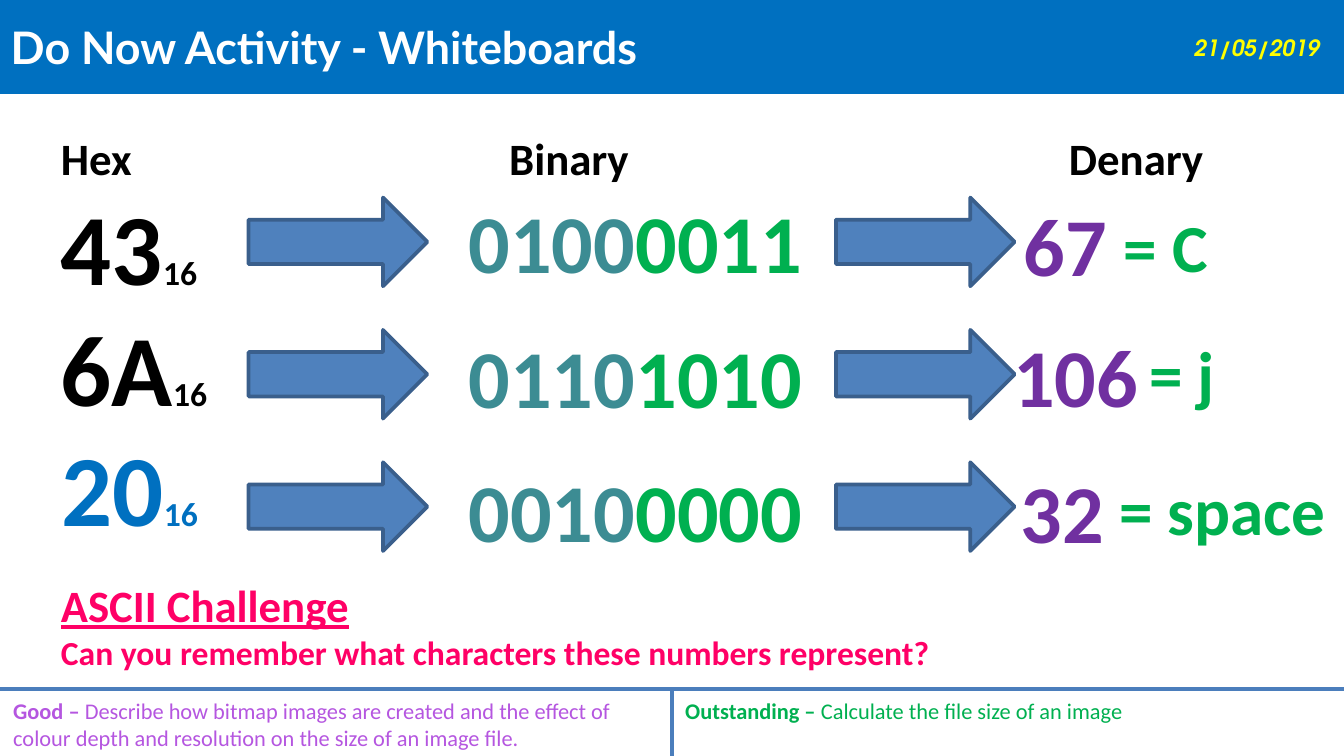
from lxml.etree import SubElement
from pptx import Presentation
from pptx.dml.color import RGBColor
from pptx.enum.shapes import MSO_CONNECTOR, MSO_SHAPE
from pptx.enum.text import MSO_ANCHOR, PP_ALIGN
from pptx.oxml.ns import qn
from pptx.util import Pt

EMU_PER_PX = 4572
WIDTH, HEIGHT = 2000, 1125
COLOURS = {
    "banner": "0070C0", "white": "FFFFFF", "date": "FFFF00", "text": "000000",
    "high": "3C8C93", "low": "00B050", "denary": "7030A0", "challenge": "FF0066",
    "arrow": "4F81BD", "arrow_edge": "3A5F8C", "rule": "4B7EBC", "good": "B556E0",
}


def px(length):
    """Turn px into EMU."""
    return length * EMU_PER_PX


def paint(fill, colour):
    """Give a fill one solid colour from the palette."""
    fill.solid()
    fill.fore_color.rgb = RGBColor.from_string(COLOURS[colour])


def write(paragraph, *pieces, family="Calibri"):
    """Add (text, size, colour, style) runs, where style holds any of b, i and u."""
    paragraph.alignment = PP_ALIGN.LEFT
    for text, size, colour, style in pieces:
        run = paragraph.add_run()
        run.text = text
        font = run.font
        font.name, font.size = family, Pt(size)
        font.bold, font.italic, font.underline = (mark in style for mark in "biu")
        font.color.rgb = RGBColor.from_string(COLOURS[colour])


def add_label(slide, box, *pieces, wrap=False, family="Calibri"):
    """Place a text box and return its text frame."""
    frame = slide.shapes.add_textbox(*map(px, box)).text_frame
    frame.word_wrap = wrap
    write(frame.paragraphs[0], *pieces, family=family)
    return frame


def add_block(slide, kind, box, fill):
    """Place a flat filled shape."""
    block = slide.shapes.add_shape(kind, *map(px, box))
    block.shadow.inherit = False
    paint(block.fill, fill)
    return block


def add_rule(slide, start, end):
    """Draw a straight rule between two points."""
    rule = slide.shapes.add_connector(MSO_CONNECTOR.STRAIGHT, *map(px, start + end))
    rule.line.width = Pt(2.25)
    paint(rule.line.fill, "rule")
    SubElement(rule._element.spPr, qn("a:effectLst"))


def add_banner(slide, left, top, width, height):
    """Build the title band with its date."""
    band = add_block(slide, MSO_SHAPE.RECTANGLE, (left, top, width, height), "banner")
    band.line.fill.background()
    title = slide.shapes.title
    title.left, title.top, title.width, title.height = map(
        px, (left - 4, top + 16, width, 106))
    slide.shapes._spTree.append(title._element)
    title.text_frame.vertical_anchor = MSO_ANCHOR.MIDDLE
    write(title.text_frame.paragraphs[0],
          ("Do Now Activity - Whiteboards", 24, "white", "b"), family="Lato")
    date = add_label(slide, (left + width - 243, top + 41, 240, 60),
                     ("21/05/2019", 12, "date", "bi"),
                     wrap=True, family="TeX Gyre Adventor")
    date.vertical_anchor = MSO_ANCHOR.MIDDLE


def add_task(slide, left, top, width, height):
    """Write the headings, the first hex numbers and the challenge."""
    frame = add_label(slide, (left, top, width, height),
                      ("Hex\tBinary\tDenary", 24, "text", "b"), wrap=True)
    tabs = SubElement(frame.paragraphs[0]._p.get_or_add_pPr(), qn("a:tabLst"))
    for position in (667, 1500):
        SubElement(tabs, qn("a:tab"), pos=str(px(position)), algn="l")
    for number in ("43", "6A"):
        write(frame.add_paragraph(),
              (number, 54, "text", "b"), ("16", 18, "text", "b"))
    challenge = frame.add_paragraph()
    challenge.space_before = Pt(81)
    write(challenge, ("ASCII Challenge", 24, "challenge", "bu"))
    write(frame.add_paragraph(),
          ("Can you remember what characters these numbers represent?",
           18, "challenge", "b"))


def add_conversion(slide, left, top, bits, denary, character):
    """Build one row of arrows, binary digits, denary value and character."""
    for offset in (0, 874):
        arrow = add_block(slide, MSO_SHAPE.RIGHT_ARROW,
                          (left + offset, top, 266, 132), "arrow")
        paint(arrow.line.fill, "arrow_edge")
        arrow.line.width = Pt(2)
    digits, rise = bits
    add_label(slide, (left + 308, top - rise, 590, 168),
              (digits[:4], 44, "high", "b"), (digits[4:], 44, "low", "b"))
    for (text, x, y, width), size, colour, height in (
            (denary, 44, "denary", 168), (character, 36, "low", 142)):
        add_label(slide, (left + x, top + y, width, height), (text, size, colour, "b"))


def add_outcomes(slide, left, top, width, height):
    """Build the ruled footer with the two learning outcomes."""
    middle = left + width // 2
    add_rule(slide, (left, top), (left + width, top))
    add_rule(slide, (middle, top), (middle, top + height))
    outcomes = (
        (left, 984, 100, "good", "Good – ",
         "Describe how bitmap images are created and the effect of "
         "colour depth and resolution on the size of an image file."),
        (middle, 976, 60, "low", "Outstanding – ",
         "Calculate the file size of an image"),
    )
    for x, span, depth, colour, level, outcome in outcomes:
        add_label(slide, (x, top + 3, span, depth),
                  (level, 12, colour, "b"), (outcome, 12, colour, ""), wrap=True)


def main():
    """Build and save the slide."""
    deck = Presentation()
    deck.slide_width, deck.slide_height = px(WIDTH), px(HEIGHT)
    slide = deck.slides.add_slide(deck.slide_layouts[5])
    add_outcomes(slide, 0, 1025, WIDTH, HEIGHT - 1025)
    add_banner(slide, 0, 0, WIDTH, 140)
    add_task(slide, 71, 185, 1890, 834)
    conversions = (
        (("01000011", 19), ("67", 1134, -14, 178), (" = C", 1260, 2, 190)),
        (("01101010", 15), ("106", 1118, -17, 246), (" = j", 1298, -7, 162)),
        (("00100000", 12), ("32", 1129, -11, 178), ("= space", 1276, -1, 352)),
    )
    for row, (bits, denary, character) in enumerate(conversions):
        add_conversion(slide, 370, 294 + 197 * row, bits, denary, character)
    add_label(slide, (72, 624, 264, 202),
              ("20", 54, "banner", "b"), ("16", 18, "banner", "b"))
    deck.save("out.pptx")


if __name__ == "__main__":
    main()
